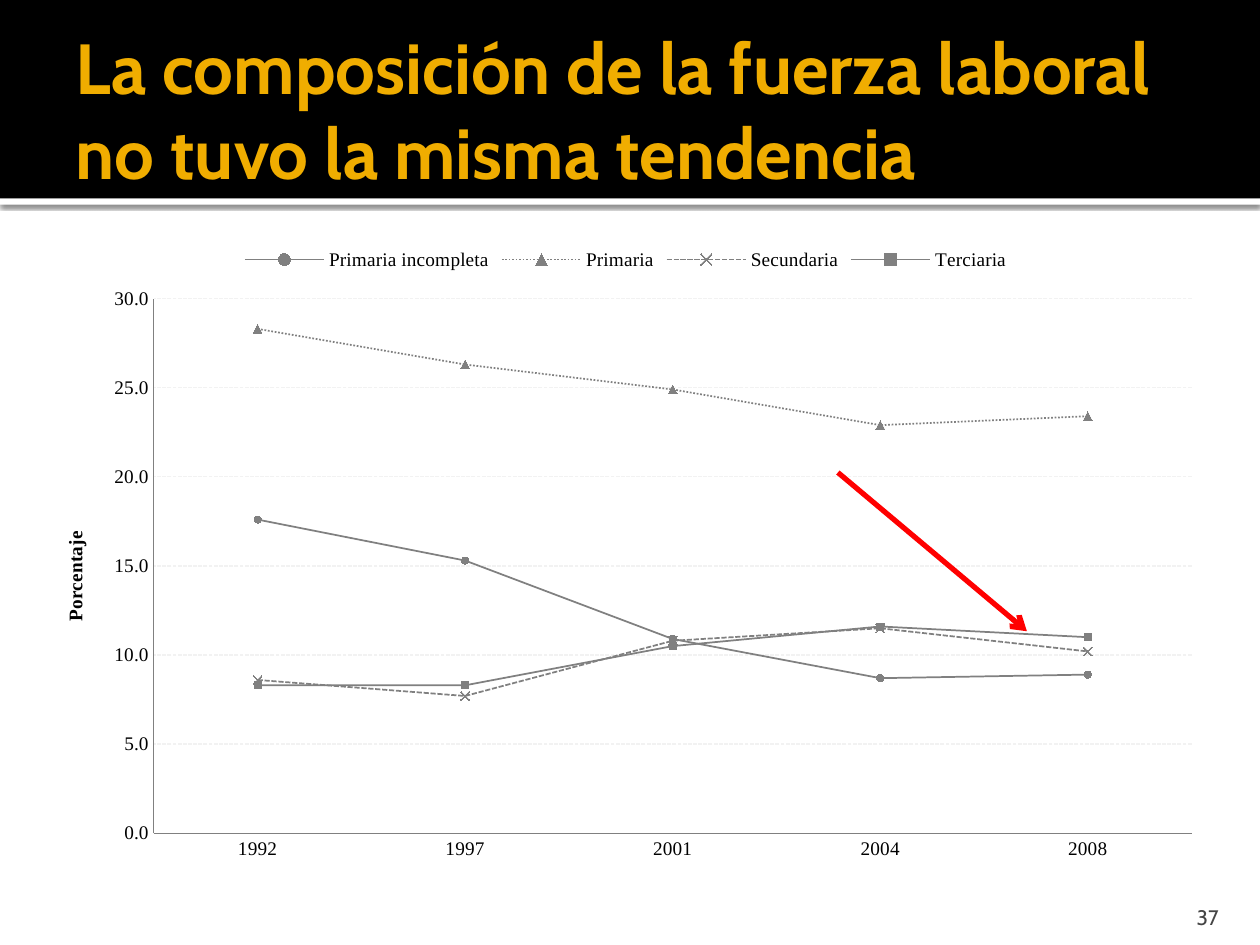
from dataclasses import dataclass
from typing import Optional

from lxml import etree
from pptx import Presentation
from pptx.chart.data import CategoryChartData
from pptx.dml.color import RGBColor
from pptx.enum import chart as charts, dml, shapes, text
from pptx.oxml import parse_xml
from pptx.oxml.ns import nsdecls, qn
from pptx.util import Inches, Pt

BLACK = RGBColor(0, 0, 0)
WHITE = RGBColor(255, 255, 255)
GOLD = RGBColor(0xF0, 0xAD, 0x00)
DARK = RGBColor(0x45, 0x45, 0x45)
GRAY = RGBColor(0x80, 0x80, 0x80)
PALE = RGBColor(0xF2, 0xF2, 0xF2)
RED = RGBColor(255, 0, 0)
SANS, SERIF = "Cabin", "Times New Roman"
WIDTH, HEIGHT = Inches(10), Inches(7.5)
BAND = 0.21  # header share of the slide's height
YEARS = ["1992", "1997", "2001", "2004", "2008"]
MARK = charts.XL_MARKER_STYLE
DASH = dml.MSO_LINE


@dataclass
class Level:
    name: str
    shares: list[float]
    marker: MARK
    size: int
    dash: Optional[DASH] = None


LEVELS = [
    Level("Primaria incompleta", [17.6, 15.3, 10.9, 8.7, 8.9], MARK.CIRCLE, 4),
    Level("Primaria", [28.3, 26.3, 24.9, 22.9, 23.4], MARK.TRIANGLE, 5, DASH.ROUND_DOT),
    Level("Secundaria", [8.6, 7.7, 10.8, 11.5, 10.2], MARK.X, 5, DASH.SQUARE_DOT),
    Level("Terciaria", [8.3, 8.3, 10.5, 11.6, 11.0], MARK.SQUARE, 4),
]


def place(item, left: float, top: float, width: float, height: float) -> None:
    """Set a position in shares of the slide's size."""
    item.left, item.top = round(left * WIDTH), round(top * HEIGHT)
    item.width, item.height = round(width * WIDTH), round(height * HEIGHT)


def write(frame, content: str, *, size: float, color: RGBColor, bold=False,
          align=text.PP_ALIGN.LEFT, anchor=text.MSO_ANCHOR.MIDDLE,
          insets=(0.1, 0.05, 0.1, 0.05)) -> None:
    frame.word_wrap = True
    frame.auto_size = text.MSO_AUTO_SIZE.NONE
    frame.vertical_anchor = anchor
    (frame.margin_left, frame.margin_top,
     frame.margin_right, frame.margin_bottom) = map(Inches, insets)
    para = frame.paragraphs[0]
    para.alignment = align
    span = para.add_run()
    span.text = content
    font = span.font
    font.name, font.size, font.bold = SANS, Pt(size), bold
    font.color.rgb = color


def add_band(page, top: float, height: float, color: RGBColor):
    band = page.shapes.add_shape(shapes.MSO_SHAPE.RECTANGLE, 0, 0, 1, 1)
    place(band, 0, top, 1, height)
    band.shadow.inherit = False
    band.fill.solid()
    band.fill.fore_color.rgb = color
    band.line.fill.background()
    return band


def add_header(page) -> None:
    strip = add_band(page, BAND, 0.0067, WHITE)
    effects = strip._element.spPr.find(qn("a:effectLst"))
    effects.append(parse_xml(
        f'<a:outerShdw {nsdecls("a")} blurRad="{Pt(2.5)}" dist="{Pt(0.8)}" '
        'dir="5400000" algn="tl" rotWithShape="0"><a:srgbClr val="000000">'
        '<a:alpha val="60000"/></a:srgbClr></a:outerShdw>'))
    add_band(page, 0, BAND, BLACK)
    title = page.shapes.title
    page.shapes._spTree.append(title._element)
    place(title, 0.05, 0.023, 0.9, 0.183)
    write(title.text_frame,
          "La composición de la fuerza laboral no tuvo la misma tendencia",
          size=40.5, color=GOLD, bold=True, insets=(0.1, 0.05, 0.05, 0.05))


def fix_layout(parent, **shares: float) -> None:
    """Pin a chart part, in shares of the chart's size."""
    old = parent.find(qn("c:layout"))
    if old is not None:
        parent.remove(old)
    target = '<c:layoutTarget val="inner"/>' if "w" in shares else ""
    modes = "".join(f'<c:{axis}Mode val="edge"/>' for axis in "xy")
    values = "".join(f'<c:{key} val="{value}"/>' for key, value in shares.items())
    layout = parse_xml(f'<c:layout {nsdecls("c")}><c:manualLayout>{target}{modes}'
                       f'{values}</c:manualLayout></c:layout>')
    text_part = parent.find(qn("c:tx"))
    parent.insert(0 if text_part is None else 1, layout)


def paint(parent, place_before: tuple[str, ...], border: bool) -> None:
    """Give a chart part a white background."""
    line = f'<a:ln w="{Pt(0.75)}"><a:solidFill><a:srgbClr val="{WHITE}"/></a:solidFill></a:ln>'
    part = parse_xml(f'<c:spPr {nsdecls("c", "a")}><a:solidFill><a:srgbClr val="{WHITE}"/>'
                     f'</a:solidFill>{line if border else ""}</c:spPr>')
    following = [child for child in parent if child.tag in map(qn, place_before)]
    if following:
        following[0].addprevious(part)
    else:
        parent.append(part)


def style_series(series, level: Level) -> None:
    series.smooth = False
    line, marker = series.format.line, series.marker
    line.color.rgb, line.width = GRAY, Pt(1)
    if level.dash is not None:
        line.dash_style = level.dash
    marker.style, marker.size = level.marker, level.size
    marker.format.line.color.rgb = GRAY
    if level.marker == MARK.X:
        marker.format.fill.background()
    else:
        marker.format.fill.solid()
        marker.format.fill.fore_color.rgb = GRAY


def style_axes(chart) -> None:
    for axis in (chart.category_axis, chart.value_axis):
        axis.major_tick_mark = axis.minor_tick_mark = charts.XL_TICK_MARK.NONE
        axis.format.line.color.rgb, axis.format.line.width = GRAY, Pt(0.75)
    values = chart.value_axis
    values.minimum_scale, values.maximum_scale, values.major_unit = 0, 30, 5
    values.tick_labels.number_format = "0.0"
    values.tick_labels.number_format_is_linked = False
    grid = values.major_gridlines.format.line
    grid.color.rgb, grid.width, grid.dash_style = PALE, Pt(0.75), DASH.SQUARE_DOT
    span = values.axis_title.text_frame.paragraphs[0].add_run()
    span.text = "Porcentaje"
    span.font.name, span.font.size, span.font.bold = SERIF, Pt(11), True
    span.font.color.rgb = BLACK
    fix_layout(values.axis_title._element, x=0.02, y=0.46)


def add_labor_chart(page) -> None:
    data = CategoryChartData(number_format="0.0")
    data.categories = YEARS
    for level in LEVELS:
        data.add_series(level.name, level.shares)
    frame = page.shapes.add_chart(charts.XL_CHART_TYPE.LINE_MARKERS, 0, 0, 1, 1, data)
    place(frame, 0.028, 0.248, 0.937, 0.675)
    chart = frame.chart
    chart.has_title = False
    chart.font.name, chart.font.size = SERIF, Pt(11)
    chart.font.color.rgb = BLACK
    chart.has_legend = True
    chart.legend.position = charts.XL_LEGEND_POSITION.TOP
    chart.legend.include_in_layout = False
    plot = chart.plots[0]
    plot.vary_by_categories = False
    for series, level in zip(plot.series, LEVELS):
        style_series(series, level)
    style_axes(chart)
    space = chart._chartSpace
    area = space.chart.plotArea
    fix_layout(area, x=0.1, y=0.1, w=0.88, h=0.84)
    paint(area, ("c:extLst",), border=False)
    paint(space, ("c:txPr", "c:externalData"), border=True)


def add_arrow(page) -> None:
    arrow = page.shapes.add_connector(
        shapes.MSO_CONNECTOR.STRAIGHT, Inches(6.65), Inches(3.75), Inches(8.15), Inches(5.01))
    arrow.line.color.rgb, arrow.line.width = RED, Pt(3)
    etree.SubElement(arrow.line._get_or_add_ln(), qn("a:tailEnd"), type="arrow")
    etree.SubElement(arrow._element.spPr, qn("a:effectLst"))


def main() -> None:
    deck = Presentation()
    deck.slide_width, deck.slide_height = WIDTH, HEIGHT
    page = deck.slides.add_slide(deck.slide_layouts[5])
    add_header(page)
    number = page.shapes.add_textbox(0, 0, 1, 1)
    place(number, 0.897, 0.944, 0.08, 0.04)
    write(number.text_frame, "37", size=12, color=DARK, align=text.PP_ALIGN.RIGHT,
          anchor=text.MSO_ANCHOR.BOTTOM, insets=(0.1, 0.05, 0.1, 0))
    add_labor_chart(page)
    add_arrow(page)
    deck.save("out.pptx")


if __name__ == "__main__":
    main()
